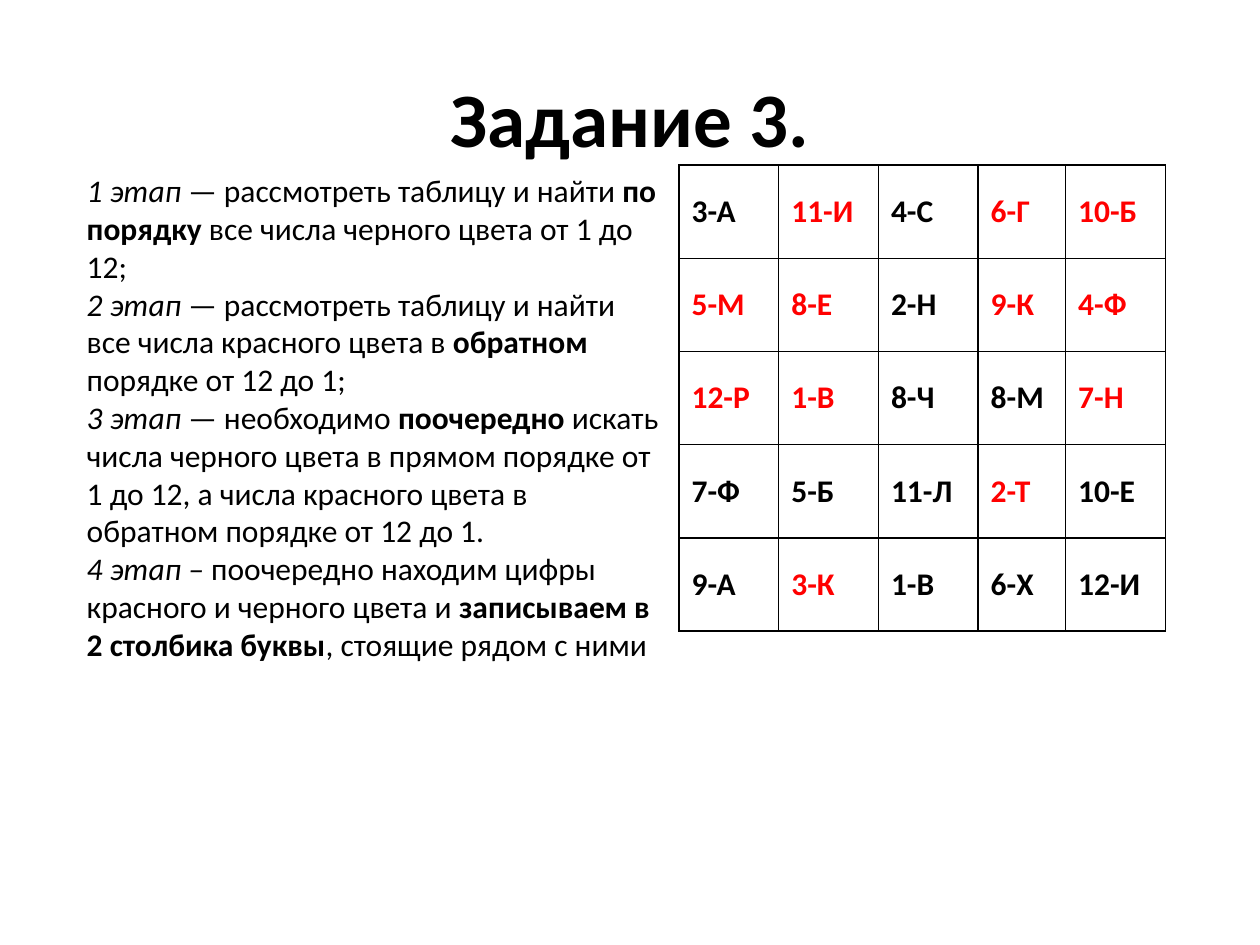
"""Build a slide with a four-stage attention task and its red and black letter table."""
from dataclasses import dataclass

from lxml.etree import SubElement
from pptx import Presentation
from pptx.dml.color import RGBColor
from pptx.enum.text import MSO_ANCHOR, PP_ALIGN
from pptx.oxml.ns import qn
from pptx.util import Pt

BLACK = "000000"
RED = "FF0000"
COLUMN_WIDTHS = [57, 57, 57, 50, 57]
ROW_HEIGHT = 53.28


@dataclass
class Piece:
    text: str
    bold: bool = False
    italic: bool = False


@dataclass
class Entry:
    text: str
    color: str = BLACK


STAGES = [
    [
        Piece("1 этап", italic=True),
        Piece(" — рассмотреть таблицу и найти"),
        Piece(" по порядку", bold=True),
        Piece(" все числа черного цвета от 1 до 12;"),
    ],
    [
        Piece("2 этап", italic=True),
        Piece(" — рассмотреть таблицу и найти все числа красного цвета в"),
        Piece(" обратном", bold=True),
        Piece(" порядке от 12 до 1;"),
    ],
    [
        Piece("3 этап", italic=True),
        Piece(" — необходимо"),
        Piece(" поочередно", bold=True),
        Piece(
            " искать числа черного цвета в прямом порядке от 1 до 12, "
            "а числа красного цвета в обратном порядке от 12 до 1."
        ),
    ],
    [
        Piece("4 этап – ", italic=True),
        Piece("поочередно находим цифры красного и черного цвета и "),
        Piece("записываем в 2 столбика буквы", bold=True),
        Piece(", стоящие рядом с ними"),
    ],
]

ENTRIES = [
    [Entry("3-А"), Entry("11-И", RED), Entry("4-С"), Entry("6-Г", RED), Entry("10-Б", RED)],
    [Entry("5-М", RED), Entry("8-Е", RED), Entry("2-Н"), Entry("9-К", RED), Entry("4-Ф", RED)],
    [Entry("12-Р", RED), Entry("1-В", RED), Entry("8-Ч"), Entry("8-М"), Entry("7-Н", RED)],
    [Entry("7-Ф"), Entry("5-Б"), Entry("11-Л"), Entry("2-Т", RED), Entry("10-Е")],
    [Entry("9-А"), Entry("3-К", RED), Entry("1-В"), Entry("6-Х"), Entry("12-И")],
]


def set_color(color_format, color: str) -> None:
    color_format.rgb = RGBColor.from_string(color)


def add_text(paragraph, text: str, *, size: float = 18, color: str = BLACK,
             bold: bool = False, italic: bool = False) -> None:
    run = paragraph.add_run()
    run.text = text
    run.font.name = "Calibri"
    run.font.size = Pt(size)
    run.font.bold = bold
    run.font.italic = italic
    set_color(run.font.color, color)


def add_borders(cell, color: str, width: float) -> None:
    properties = cell._tc.get_or_add_tcPr()
    for side in ("a:lnL", "a:lnR", "a:lnT", "a:lnB"):
        line = SubElement(properties, qn(side), w=str(Pt(width)))
        fill = SubElement(line, qn("a:solidFill"))
        SubElement(fill, qn("a:srgbClr"), val=color)


def add_title(slide, text: str) -> None:
    title = slide.shapes.title
    title.left, title.top, title.width, title.height = Pt(36), Pt(21.6), Pt(648), Pt(90)
    title.text_frame.vertical_anchor = MSO_ANCHOR.MIDDLE
    paragraph = title.text_frame.paragraphs[0]
    paragraph.alignment = PP_ALIGN.CENTER
    add_text(paragraph, text, size=44, bold=True)


def add_letter_table(slide, entries: list[list[Entry]]) -> None:
    frame = slide.shapes.add_table(
        len(entries), len(COLUMN_WIDTHS), Pt(388), Pt(94.3),
        Pt(sum(COLUMN_WIDTHS)), Pt(ROW_HEIGHT * len(entries)),
    )
    table = frame.table
    table.first_row = False
    table.horz_banding = False
    for column, width in zip(table.columns, COLUMN_WIDTHS):
        column.width = Pt(width)
    for row, row_entries in zip(table.rows, entries):
        row.height = Pt(ROW_HEIGHT)
        for cell, entry in zip(row.cells, row_entries):
            cell.vertical_anchor = MSO_ANCHOR.MIDDLE
            add_borders(cell, BLACK, 1)
            cell.fill.background()
            add_text(cell.text_frame.paragraphs[0], entry.text, color=entry.color, bold=True)


def add_stages(slide, stages: list[list[Piece]]) -> None:
    box = slide.shapes.add_textbox(Pt(42.5), Pt(94.3), Pt(342.7), Pt(290.9))
    text_frame = box.text_frame
    text_frame.word_wrap = True
    for index, stage in enumerate(stages):
        paragraph = text_frame.add_paragraph() if index else text_frame.paragraphs[0]
        for piece in stage:
            add_text(paragraph, piece.text, bold=piece.bold, italic=piece.italic)


def main() -> None:
    presentation = Presentation()
    presentation.slide_width, presentation.slide_height = Pt(720), Pt(540)
    slide = presentation.slides.add_slide(presentation.slide_layouts[5])
    add_title(slide, "Задание 3.")
    add_letter_table(slide, ENTRIES)
    add_stages(slide, STAGES)
    presentation.save("out.pptx")


if __name__ == "__main__":
    main()
